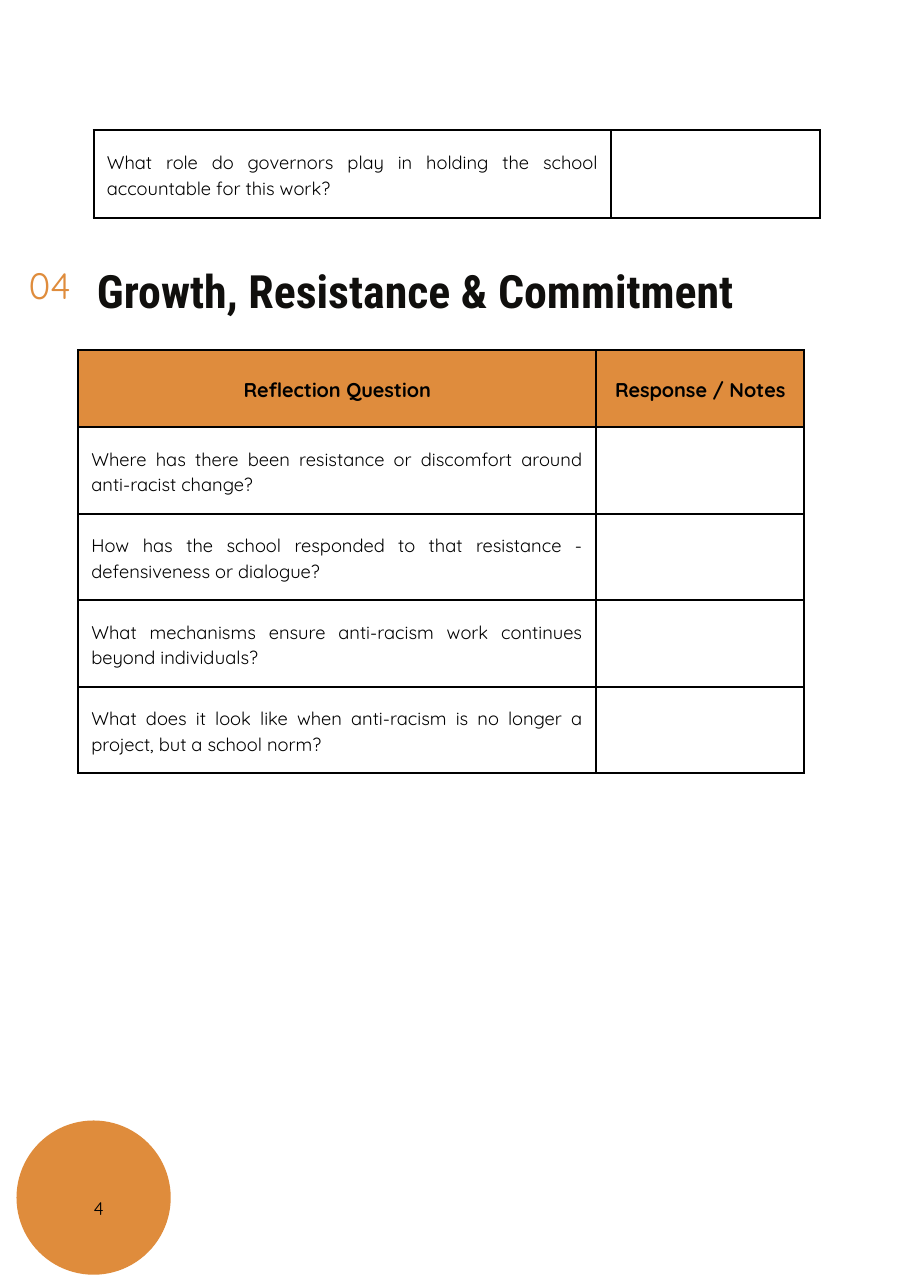
from lxml import etree
from pptx import Presentation
from pptx.dml.color import RGBColor
from pptx.enum.shapes import MSO_SHAPE
from pptx.enum.text import MSO_ANCHOR, MSO_AUTO_SIZE, PP_ALIGN
from pptx.oxml.ns import qn
from pptx.util import Inches, Pt

OVAL = MSO_SHAPE.OVAL
TOP, MIDDLE = MSO_ANCHOR.TOP, MSO_ANCHOR.MIDDLE
FIXED = MSO_AUTO_SIZE.NONE
LEFT, CENTER, JUSTIFY = PP_ALIGN.LEFT, PP_ALIGN.CENTER, PP_ALIGN.JUSTIFY
HUES = {"ink": "000000", "title": "100F0D", "disc": "DF8C3C", "head": "DF8C3D"}
COLS = [4.7, 1.89]
PAD = Inches(0.12)


def write(frame, text, size, lead, hue="ink", font="Quicksand", bold=False, align=LEFT, pad=0):
    frame.text = text
    frame.word_wrap = True
    frame.margin_left = frame.margin_right = frame.margin_top = frame.margin_bottom = pad
    line = frame.paragraphs[0]
    line.alignment = align
    line.line_spacing = Pt(lead)
    face = line.runs[0].font
    face.name, face.size, face.bold = font, Pt(size), bold
    face.color.rgb = RGBColor.from_string(HUES[hue])


def add_grid(left, top, rows, heights):
    frame = slide.shapes.add_table(len(rows), len(COLS), Inches(left), Inches(top),
                                   Inches(sum(COLS)), Inches(sum(heights)))
    table = frame.table
    table.first_row = table.horz_banding = False
    for col, width in zip(table.columns, COLS):
        col.width = Inches(width)
    for row, height, texts in zip(table.rows, heights, rows):
        row.height = Inches(height)
        head = all(texts)
        for cell, text in zip(row.cells, texts):
            props = cell._tc.get_or_add_tcPr()
            for side in ("a:lnL", "a:lnR", "a:lnT", "a:lnB"):
                edge = etree.SubElement(props, qn(side), w=str(Pt(1.5)))
                fill = etree.SubElement(edge, qn("a:solidFill"))
                etree.SubElement(fill, qn("a:srgbClr"), val=HUES["ink"])
            if head:
                cell.fill.solid()
                cell.fill.fore_color.rgb = RGBColor.from_string(HUES["head"])
            else:
                cell.fill.background()
            if text:
                size, align = (13, CENTER) if head else (12, JUSTIFY)
                write(cell.text_frame, text, size, size * 1.4, bold=head, align=align)
                cell.margin_left = cell.margin_right = PAD
                cell.margin_top = cell.margin_bottom = PAD
                cell.vertical_anchor = MIDDLE


deck = Presentation()
deck.slide_width, deck.slide_height = Inches(8.26), Inches(11.69)
slide = deck.slides.add_slide(deck.slide_layouts[5])

add_grid(0.85, 1.18, [("What role do governors play in holding the school accountable for this work?", "")], [0.8])

disc = slide.shapes.add_shape(OVAL, Inches(0.15), Inches(10.17), Inches(1.4), Inches(1.4))
disc.shadow.inherit = False
disc.fill.solid()
disc.fill.fore_color.rgb = RGBColor.from_string(HUES["disc"])
disc.line.fill.background()

title = slide.shapes.title
title.left, title.top, title.width, title.height = [Inches(n) for n in (0.88, 2.47, 6.42, 0.45)]
write(title.text_frame, "Growth, Resistance & Commitment", 30, 30, "title", "Roboto Condensed", True)
title.text_frame.vertical_anchor = TOP
title.text_frame.auto_size = FIXED

labels = [
    ("04", (0.26, 2.45, 0.62, 0.41), 24, 24, "disc"),
    ("4", (0.85, 10.83, 1.4, 0.25), 12, 16.8, "ink"),
]
for text, place, size, lead, hue in labels:
    box = slide.shapes.add_textbox(*[Inches(n) for n in place])
    write(box.text_frame, text, size, lead, hue)

asks = [
    "Where has there been resistance or discomfort around anti-racist change?",
    "How has the school responded to that resistance - defensiveness or dialogue?",
    "What mechanisms ensure anti-racism work continues beyond individuals?",
    "What does it look like when anti-racism is no longer a project, but a school norm?",
]
rows = [("Reflection Question", "Response / Notes")] + [(ask, "") for ask in asks]
add_grid(0.71, 3.18, rows, [0.7] + [(3.84 - 0.7) / len(asks)] * len(asks))

deck.save("out.pptx")
